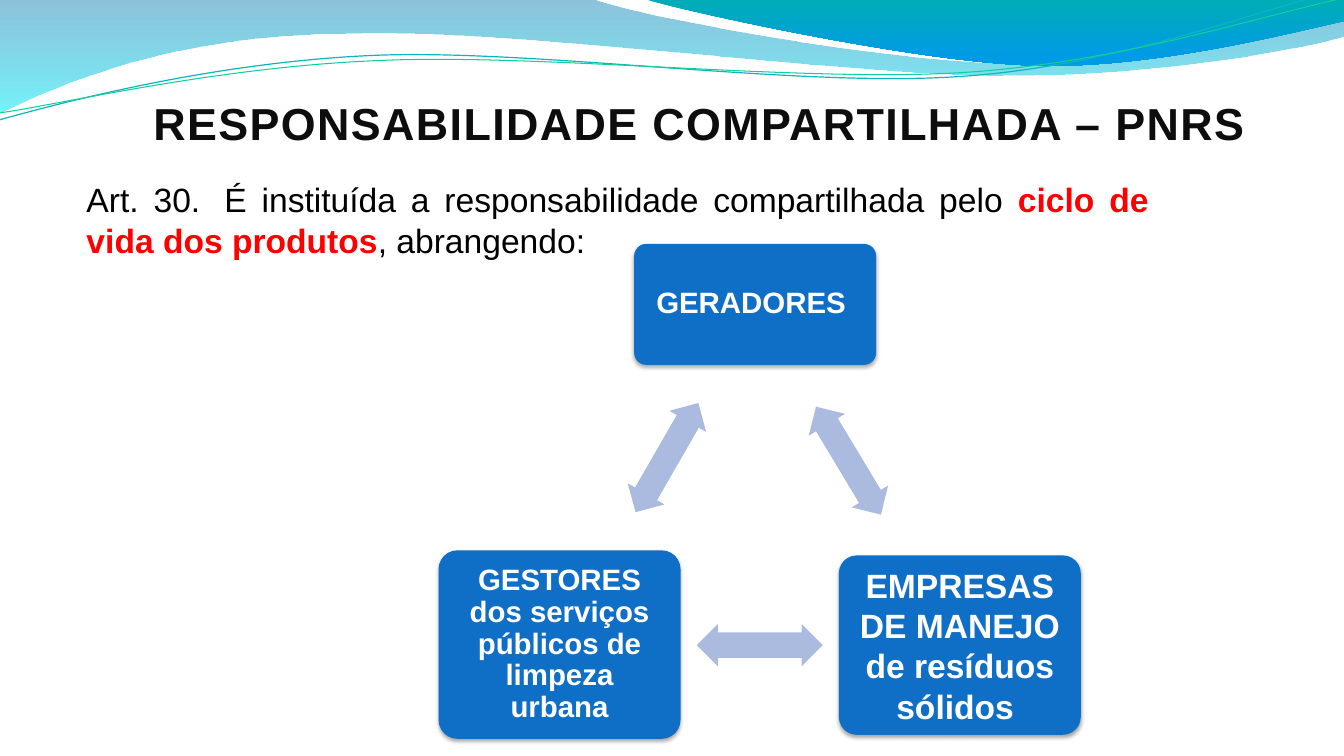
from lxml import etree
from pptx import Presentation
from pptx import util as u
from pptx.dml.color import RGBColor
from pptx.enum import shapes, text
from pptx.oxml.ns import qn

theme = {
    "font": "Arial",
    "title": 32, "body": 24, "box": 21,
    "ink": "0D0D0D", "black": "000000", "red": "FF0000", "white": "FFFFFF",
    "blue": "0F6FC6", "arrow": "ABBBDF",
    "teal": "09B6BE", "green": "10CF9B",
    "pale": [(0, "0079AF", 45), (1, "00EBF8", 55)],
    "deep": [(0, "00ADB6", 100), (0.8, "009BE5", 100)],
}


def add_run(para, words, size, color, bold=True):
    run = para.add_run()
    run.text = words
    run.font.name = theme["font"]
    run.font.size = u.Pt(theme[size])
    run.font.bold = bold
    run.font.color.rgb = RGBColor.from_string(theme[color])
    return run


def add_curve(slide, parts, closed):
    spots = [(u.Inches(part[i]), u.Inches(part[i + 1]))
             for part in parts for i in range(0, len(part), 2)]
    pen = slide.shapes.build_freeform(*spots[0])
    pen.add_line_segments(spots[1:], close=closed)
    shape = pen.convert_to_shape()
    shape.shadow.inherit = False
    legs = iter(list(shape._element.spPr.iter(qn("a:lnTo"))))
    for part in parts[1:]:
        leg = next(legs)
        if len(part) == 6:
            leg.addprevious(etree.Element(qn("a:cubicBezTo")))
            bend = leg.getprevious()
            for piece in (leg, next(legs), next(legs)):
                bend.append(piece[0])
                piece.getparent().remove(piece)
    return shape


deck = Presentation()
deck.slide_width = u.Inches(13.33)
deck.slide_height = u.Inches(7.5)
slide = deck.slides.add_slide(deck.slide_layouts[5])

waves = [
    ([(0, -0.01), (5.87, -0.01), (6.34, 0.17, 8.85, 0.63, 10.11, 0.63),
      (11.38, 0.63, 12.78, 0.26, 13.33, 0.09), (13.35, 0.36),
      (13.11, 0.44, 11.6, 0.76, 9.94, 0.75), (8.29, 0.75, 5.09, 0.28, 3.43, 0.34),
      (1.72, 0.35, 0.61, 0.83, -0.01, 1.13)], "pale"),
    ([(6.39, -0.01), (6.79, 0.11, 9.09, 0.62, 10.25, 0.65),
      (11.41, 0.69, 12.82, 0.32, 13.33, 0.21), (13.33, 0)], "deep"),
]
for parts, blend in waves:
    wave = add_curve(slide, parts, True)
    wave.line.fill.background()
    wave.fill.gradient()
    wave.fill.gradient_angle = 270
    stops = theme[blend]
    for stop, (place, color, alpha) in zip(wave.fill.gradient_stops, stops):
        stop.position = place
        stop.color.rgb = RGBColor.from_string(color)
    tints = list(wave._element.spPr.iter(qn("a:srgbClr")))
    for tint, (place, color, alpha) in zip(tints, stops):
        etree.SubElement(tint, qn("a:alpha"), val=str(alpha * 1000))

lines = [
    ([(-0.01, 1.19), (0.64, 1.01, 2.11, 0.62, 3.69, 0.55),
      (5.27, 0.48, 7.9, 0.87, 9.5, 0.76), (11.1, 0.66, 12.52, 0.08, 13.31, -0.1)],
     "teal", 0.85),
    ([(0, 1.12), (0.63, 1.03, 2.18, 0.66, 3.78, 0.6),
      (5.37, 0.53, 7.96, 0.82, 9.55, 0.72), (11.15, 0.62, 12.55, 0.14, 13.34, -0.02)],
     "green", 0.75),
]
for parts, color, width in lines:
    line = add_curve(slide, parts, False)
    line.fill.background()
    line.line.color.rgb = RGBColor.from_string(theme[color])
    line.line.width = u.Pt(width)

title = slide.shapes.title
title.left, title.top = u.Inches(1.16), u.Inches(0.4)
title.width, title.height = u.Inches(11.69), u.Inches(1.64)
frame = title.text_frame
frame.auto_size = text.MSO_AUTO_SIZE.NONE
frame.word_wrap = True
frame.vertical_anchor = text.MSO_ANCHOR.MIDDLE
para = frame.paragraphs[0]
para.alignment = text.PP_ALIGN.CENTER
run = add_run(para, "RESPONSABILIDADE COMPARTILHADA – PNRS ", "title", "ink")
run.font._element.set("spc", "100")

body = slide.shapes.add_textbox(
    u.Inches(0.76), u.Inches(1.73), u.Inches(10.73), u.Inches(1.79))
body.text_frame.word_wrap = True
para = body.text_frame.paragraphs[0]
para.alignment = text.PP_ALIGN.JUSTIFY
hard = chr(160)
add_run(para, f"Art. 30.{hard} É instituída a responsabilidade compartilhada pelo ",
        "body", "black", False)
add_run(para, "ciclo de vida dos produtos", "body", "red")
add_run(para, ", abrangendo:", "body", "black", False)

boxes = [
    ("GERADORES ", 6.29, 2.42, 1.2, "box", 0.9),
    ("EMPRESAS DE MANEJO de resíduos sólidos ", 8.32, 5.51, 1.78, "body", 1.0),
    ("GESTORES dos serviços públicos de limpeza urbana", 4.35, 5.46, 1.87, "box", 0.9),
]
for words, left, top, height, size, space in boxes:
    box = slide.shapes.add_shape(
        shapes.MSO_SHAPE.ROUNDED_RECTANGLE,
        u.Inches(left), u.Inches(top), u.Inches(2.4), u.Inches(height))
    box.adjustments[0] = 0.1
    box.fill.solid()
    box.fill.fore_color.rgb = RGBColor.from_string(theme["blue"])
    box.line.fill.background()
    box.shadow.inherit = False
    glow = etree.SubElement(
        box._element.spPr.find(qn("a:effectLst")), qn("a:outerShdw"),
        blurRad=str(u.Pt(3.1)), dist=str(u.Pt(1.8)), dir="5400000", rotWithShape="0")
    shade = etree.SubElement(glow, qn("a:srgbClr"), val=theme["black"])
    etree.SubElement(shade, qn("a:alpha"), val="35000")
    frame = box.text_frame
    frame.word_wrap = True
    frame.vertical_anchor = text.MSO_ANCHOR.MIDDLE
    frame.margin_left = frame.margin_right = u.Inches(0.14)
    frame.margin_top = frame.margin_bottom = u.Inches(0.14)
    para = frame.paragraphs[0]
    para.alignment = text.PP_ALIGN.CENTER
    para.line_spacing = space
    add_run(para, words, size, "white")

for left, top, turn in [(7.79, 4.36, 59), (6.91, 6.19, 180), (5.99, 4.33, 299.9)]:
    arrow = slide.shapes.add_shape(
        shapes.MSO_SHAPE.LEFT_RIGHT_ARROW,
        u.Inches(left), u.Inches(top), u.Inches(1.25), u.Inches(0.42))
    arrow.adjustments[0] = 0.6
    arrow.adjustments[1] = 0.5
    arrow.rotation = turn
    arrow.fill.solid()
    arrow.fill.fore_color.rgb = RGBColor.from_string(theme["arrow"])
    arrow.line.fill.background()
    arrow.shadow.inherit = False

deck.save("out.pptx")
